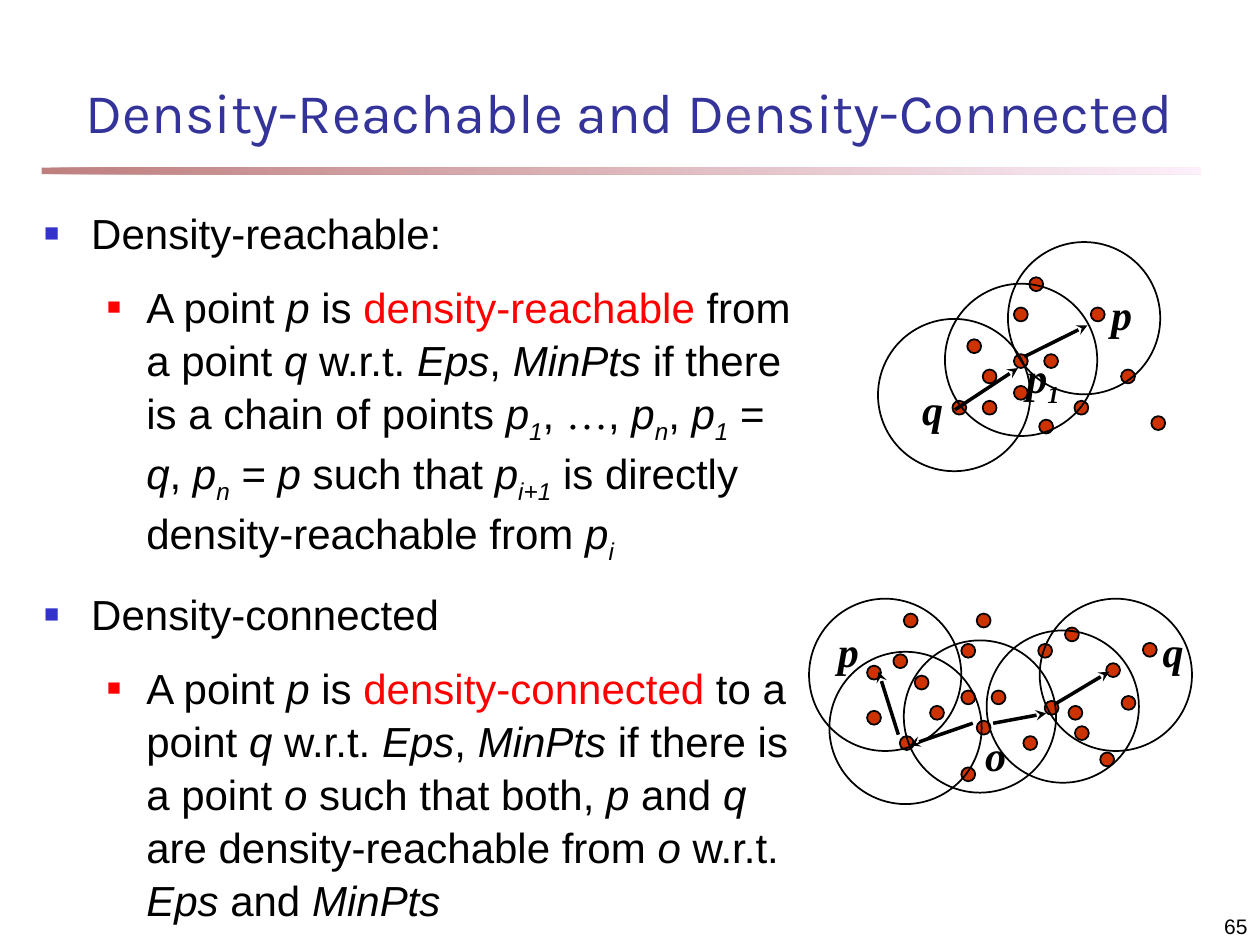
from lxml import etree
from pptx import Presentation
from pptx.dml.color import RGBColor
from pptx.enum.shapes import MSO_CONNECTOR, MSO_SHAPE
from pptx.enum.text import MSO_ANCHOR, PP_ALIGN
from pptx.oxml.ns import qn
from pptx.util import Cm, Pt

OVAL, RECT = MSO_SHAPE.OVAL, MSO_SHAPE.RECTANGLE
STRAIGHT = MSO_CONNECTOR.STRAIGHT
TOP, MIDDLE, BOTTOM = MSO_ANCHOR.TOP, MSO_ANCHOR.MIDDLE, MSO_ANCHOR.BOTTOM
LEFT, CENTER, RIGHT = PP_ALIGN.LEFT, PP_ALIGN.CENTER, PP_ALIGN.RIGHT

BLACK, RED, BLUE, NAVY, RUST = "000000", "FF0000", "3333CC", "333399", "CC3300"
SANS, SERIF, HEADING = "Arial", "Times New Roman", "Karla"
DOT, CIRCLE = 0.28, 3.07  # diameters in cm

# Runs are split by "|"; a first letter sets the style:
# "/" italic, "_" italic subscript, "!" red, "~" serif
BODY = [
    (0, "Density-reachable:"),
    (1, "A point |/p| is |!density-reachable| from a point |/q| w.r.t. |/Eps|, "
        "|/MinPts| if there is a chain of points |/p|_1|, |~…|, |/p|_n|, |/p|_1| = "
        "|/q|, |/p|_n| = |/p| such that |/p|_i+1| is directly density-reachable "
        "from |/p|_i"),
    (0, "Density-connected"),
    (1, "A point |/p| is |!density-connected| to a point |/q| w.r.t. |/Eps|, "
        "|/MinPts| if there is a point |/o |such that both, |/p| and |/q| are "
        "density-reachable from |/o| w.r.t. |/Eps| and |/MinPts"),
]
# Per level: left margin, hanging indent (cm), bullet colour, bullet size (%)
LEVELS = [(0.95, 0.95, BLUE, 60), (2.06, 0.79, RED, 55)]

# Diagram parts in cm from the diagram's corner; arrows run from start to tip
REACHABLE = {
    "dots": [(1.8, 1.96), (2.74, 2.26), (2.74, 1.32), (1.5, 3.2), (2.11, 2.57),
             (2.11, 3.2), (3.25, 3.58), (3.05, 0.71), (4.9, 2.57), (4.29, 1.32),
             (2.74, 2.9), (3.35, 2.26), (3.96, 3.2), (5.51, 3.51)],
    "circles": [(1.35, 0.84), (0, 1.55), (2.62, 0)],
    "arrows": [(2.95, 2.31, 4.22, 1.68), (1.55, 3.38, 2.82, 2.54)],
    "labels": [("p", 4.45, 0.81), ("q", 0.64, 2.72), ("p|_1", 2.74, 2.08)],
}
CONNECTED = {
    "dots": [(2.13, 1.55), (3.07, 1.85), (3.07, 0.91), (1.83, 2.77), (2.44, 2.16),
             (3.07, 3.4), (3.38, 2.46), (3.38, 0.3), (5.23, 2.16), (4.62, 0.91),
             (1.17, 2.26), (3.68, 1.85), (4.32, 2.77), (5.87, 3.1), (6.3, 1.96),
             (4.75, 2.06), (5.36, 2.57), (6.73, 0.89), (5.16, 0.58), (5.99, 1.3),
             (1.7, 1.12), (1.17, 1.35), (1.91, 0.3)],
    "circles": [(0.41, 1.07), (1.91, 0.84), (3.58, 0.64), (4.65, 0), (0, 0)],
    "arrows": [(3.3, 2.51, 2.03, 2.95), (3.71, 2.51, 4.78, 2.31),
               (1.8, 2.74, 1.4, 1.47), (4.98, 2.11, 6.05, 1.47)],
    "labels": [("p", 0.33, 0.41), ("q", 6.88, 0.41), ("o", 3.3, 2.51)],
}


def rgb(color):
    return RGBColor.from_string(color)


def add_runs(p, text, size, font=SANS, color=BLACK, bold=False, italic=False):
    for part in text.split("|"):
        style = part[0] if part[0] in "/_!~" else ""
        r = p.add_run()
        r.text = part[len(style):]
        r.font.size, r.font.bold = Pt(size), bold
        r.font.name = SERIF if style == "~" else font
        r.font.italic = italic or style in ("/", "_")
        r.font.color.rgb = rgb(RED if style == "!" else color)
        if style == "_":
            r.font._element.set("baseline", "-25000")


def add_box(s, left, top, width, height, anchor=TOP):
    tf = s.shapes.add_textbox(Cm(left), Cm(top), Cm(width), Cm(height)).text_frame
    tf.word_wrap = True
    tf.vertical_anchor = anchor
    return tf


def add_line_of_text(s, box, text, size, align=LEFT, anchor=TOP, **style):
    p = add_box(s, *box, anchor).paragraphs[0]
    p.alignment = align
    add_runs(p, text, size, **style)


def set_bullet(p, margin, hanging, color, percent):
    pPr = p._p.get_or_add_pPr()
    pPr.set("marL", str(Cm(margin)))
    pPr.set("indent", str(-Cm(hanging)))
    clr = etree.SubElement(pPr, qn("a:buClr"))
    etree.SubElement(clr, qn("a:srgbClr"), val=color)
    etree.SubElement(pPr, qn("a:buSzPct"), val=str(percent * 1000))
    etree.SubElement(pPr, qn("a:buFont"), typeface=SANS)
    etree.SubElement(pPr, qn("a:buChar"), char="■")


def add_header(s, left, top, width):
    add_line_of_text(s, (left, top, width, 2.34), "Density-Reachable and Density-Connected",
                     32, CENTER, MIDDLE, font=HEADING, color=NAVY)
    # Fading rule under the title
    bar = s.shapes.add_shape(RECT, Cm(left + 0.84), Cm(top + 2.31), Cm(23.37), Cm(0.13))
    bar.shadow.inherit = False
    bar.line.fill.background()
    bar.fill.gradient()
    bar.fill.gradient_angle = 0
    for stop, color, position in zip(bar.fill.gradient_stops, ("800000", "FAE2F6"), (0, 1)):
        stop.color.rgb = rgb(color)
        stop.position = position
        clr = stop._gs.find(qn("a:srgbClr"))
        etree.SubElement(clr, qn("a:alpha"), val="50000")


def add_body(s, left, top, width, height):
    tf = add_box(s, left, top, width, height)
    for i, (level, text) in enumerate(BODY):
        p = tf.add_paragraph() if i else tf.paragraphs[0]
        p.level = level
        p.line_spacing = 1.05
        p.space_before = Pt(12)
        set_bullet(p, *LEVELS[level])
        add_runs(p, text, 24)


def add_circle(s, left, top, size, fill=None):
    circle = s.shapes.add_shape(OVAL, Cm(left), Cm(top), Cm(size), Cm(size))
    circle.shadow.inherit = False
    circle.line.color.rgb = rgb(BLACK)
    circle.line.width = Pt(1)
    if fill:
        circle.fill.solid()
        circle.fill.fore_color.rgb = rgb(fill)
    else:
        circle.fill.background()


def add_arrow(s, x1, y1, x2, y2):
    arrow = s.shapes.add_connector(STRAIGHT, Cm(x1), Cm(y1), Cm(x2), Cm(y2))
    arrow.line.color.rgb = rgb(BLACK)
    arrow.line.width = Pt(2)
    etree.SubElement(arrow.line._get_or_add_ln(), qn("a:tailEnd"), type="stealth")
    etree.SubElement(arrow._element.spPr, qn("a:effectLst"))


def add_diagram(s, left, top, parts):
    for x, y in parts["dots"]:
        add_circle(s, left + x, top + y, DOT, RUST)
    for x, y in parts["circles"]:
        add_circle(s, left + x, top + y, CIRCLE)
    for x1, y1, x2, y2 in parts["arrows"]:
        add_arrow(s, left + x1, top + y1, left + x2, top + y2)
    for text, x, y in parts["labels"]:
        width = 1.7 if "|" in text else 1.07
        add_line_of_text(s, (left + x, top + y, width, 1.27), text, 24,
                         font=SERIF, bold=True, italic=True)


def main():
    prs = Presentation()
    prs.slide_width, prs.slide_height = Cm(25.4), Cm(19.05)
    s = prs.slides.add_slide(prs.slide_layouts[6])
    add_header(s, 0, 1.07, 25.4)
    add_body(s, 0.64, 4.01, 15.67, 13.97)
    add_diagram(s, 17.7, 4.88, REACHABLE)
    add_diagram(s, 16.31, 12.07, CONNECTED)
    # Page number
    add_line_of_text(s, (20.12, 17.98, 5.28, 1.07), "65", 12, RIGHT, BOTTOM)
    prs.save("out.pptx")


if __name__ == "__main__":
    main()
